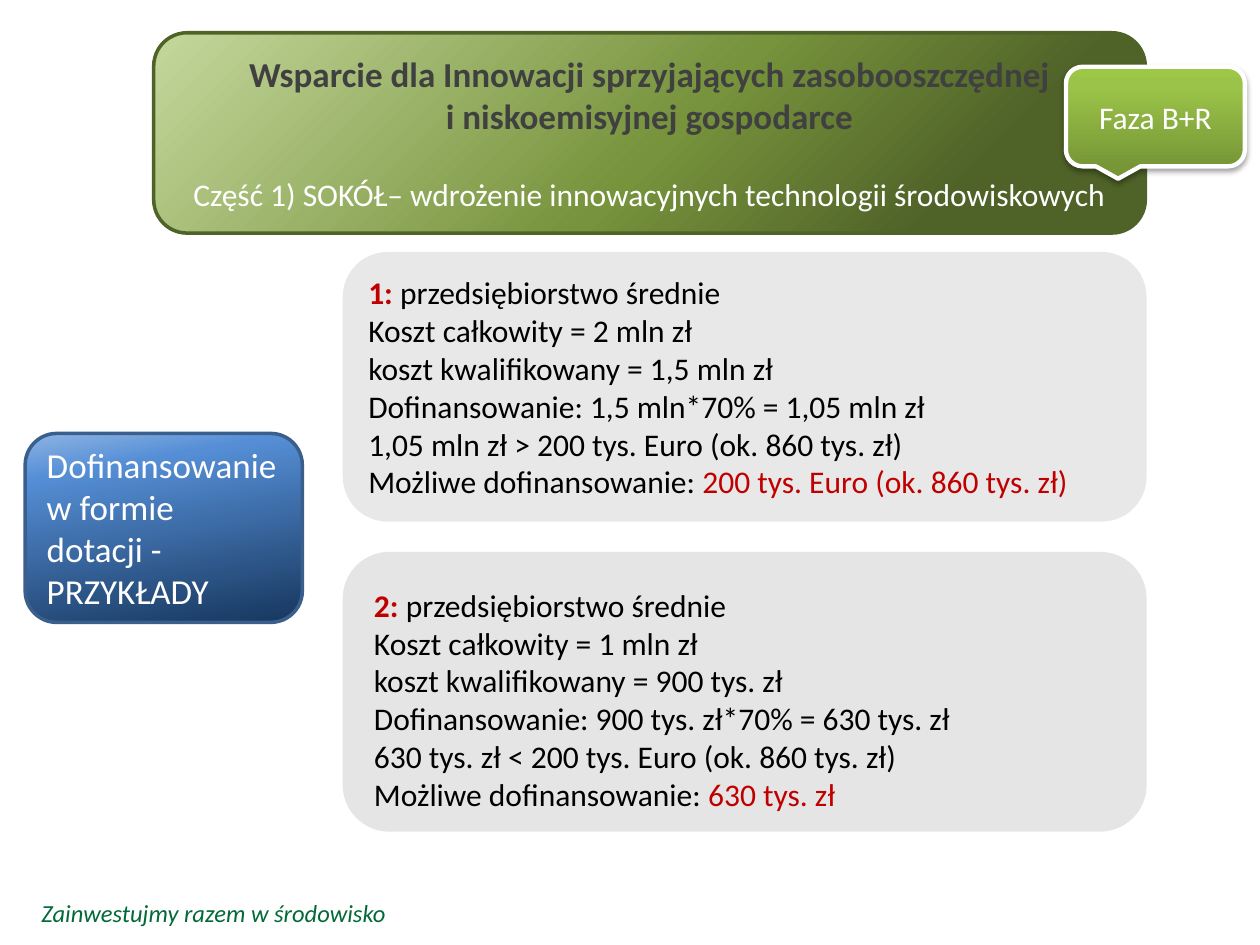
from lxml.etree import SubElement
from pptx import Presentation
from pptx.dml.color import RGBColor
from pptx.enum.shapes import MSO_SHAPE
from pptx.enum.text import MSO_ANCHOR, PP_ALIGN
from pptx.oxml import parse_xml
from pptx.oxml.ns import nsdecls, qn
from pptx.util import Inches, Pt

THEME = {
    "font": "Calibri",
    "title": {"size": 20, "color": "404040", "bold": True},
    "light": {"size": 18, "color": "FFFFFF"},
    "label": {"size": 20, "color": "FFFFFF"},
    "body": {"size": 18, "color": "000000"},
    "number": {"size": 18, "color": "C00000", "bold": True},
    "result": {"size": 18, "color": "C00000"},
    "footer": {"size": 14, "color": "026937", "italic": True},
    "panel": "D9D9D9",
    # Gradient stops run from start to end, angles are clockwise.
    "blue": ([(0, "17375E"), (80, "558ED5"), (100, "8EB4E3")], 260),
    "olive": ([(19, "4F6228"), (48, "77933C"), (99, "C3D69B")], 225),
    "lime": ([(0, "779737"), (80, "9BC348"), (100, "9DC746")], 270),
    "blue_line": ("3A5F8C", 2),
    "olive_line": ("4F6228", 2),
    "white_line": ("FFFFFF", 2.5),
}

FOOTER = [[("Zainwestujmy razem w środowisko", "footer")]]
LABEL = [[("Dofinansowanie w formie ", "label"), ("\n", "label"),
          ("dotacji - PRZYKŁADY", "label")]]
HEADER = [
    [("Wsparcie dla Innowacji sprzyjających zasobooszczędnej", "title"), ("\n", "title"),
     ("i niskoemisyjnej gospodarce", "title")],
    [("Część 1) SOKÓŁ– wdrożenie innowacyjnych technologii środowiskowych", "light")],
]
PHASE = [[("Faza B+R", "light")]]
EXAMPLES = [
    ("1: ", ["Koszt całkowity = 2 mln zł",
             "koszt kwalifikowany = 1,5 mln zł",
             "Dofinansowanie: 1,5 mln*70% = 1,05 mln zł",
             "1,05 mln zł > 200 tys. Euro (ok. 860 tys. zł)"],
     "200 tys. Euro (ok. 860 tys. zł)"),
    ("2: ", ["Koszt całkowity = 1 mln zł",
             "koszt kwalifikowany = 900 tys. zł",
             "Dofinansowanie: 900 tys. zł*70% = 630 tys. zł",
             "630 tys. zł < 200 tys. Euro (ok. 860 tys. zł)"],
     "630 tys. zł"),
]


def example_text(number, steps, result):
    return [
        [(number, "number"), ("przedsiębiorstwo średnie", "body")],
        *[[(step, "body")] for step in steps],
        [("Możliwe dofinansowanie: ", "body"), (result, "result")],
    ]


def write(box, paragraphs, align=PP_ALIGN.LEFT, anchor=MSO_ANCHOR.MIDDLE, gap=0):
    """Fill a shape with paragraphs of (text, style) spans; gap is in points."""
    frame = box.text_frame
    frame.word_wrap = True
    frame.vertical_anchor = anchor
    for index, spans in enumerate(paragraphs):
        para = frame.add_paragraph() if index else frame.paragraphs[0]
        para.alignment = align
        if index and gap:
            para.space_before = Pt(gap)
        for text, style in spans:
            if text == "\n":
                para.add_line_break()
                continue
            span = para.add_run()
            span.text = text
            look = THEME[style]
            values = {"name": THEME["font"], "size": Pt(look["size"]),
                      "bold": look.get("bold", False), "italic": look.get("italic", False)}
            for name, value in values.items():
                setattr(span.font, name, value)
            span.font.color.rgb = RGBColor.from_string(look["color"])


def add_box(page, place, line=None, kind=MSO_SHAPE.ROUNDED_RECTANGLE):
    box = page.shapes.add_shape(kind, *map(Inches, place))
    box.shadow.inherit = False
    if line:
        color, width = THEME[line]
        box.line.color.rgb = RGBColor.from_string(color)
        box.line.width = Pt(width)
    else:
        box.line.fill.background()
    return box


def add_panel(page, place, opacity):
    box = add_box(page, place)
    box.fill.solid()
    box.fill.fore_color.rgb = RGBColor.from_string(THEME["panel"])
    color = box._element.spPr.find(qn("a:solidFill"))[0]
    SubElement(color, qn("a:alpha"), val=str(opacity * 1000))
    return box


def fill_gradient(box, name):
    stops, angle = THEME[name]
    marks = "".join(f'<a:gs pos="{position * 1000}"><a:srgbClr val="{color}"/></a:gs>'
                    for position, color in stops)
    gradient = parse_xml(
        f'<a:gradFill {nsdecls("a")} rotWithShape="1"><a:gsLst>{marks}</a:gsLst>'
        f'<a:lin ang="{angle * 60000}" scaled="0"/></a:gradFill>')
    box._element.spPr.find(qn("a:prstGeom")).addnext(gradient)


def add_shadow(box, opacity, blur, distance, angle):
    effects = box._element.spPr.find(qn("a:effectLst"))
    shadow = SubElement(effects, qn("a:outerShdw"), blurRad=str(Pt(blur)),
                        dist=str(Pt(distance)), dir=str(angle * 60000), rotWithShape="0")
    color = SubElement(shadow, qn("a:srgbClr"), val="000000")
    SubElement(color, qn("a:alpha"), val=str(opacity * 1000))


def add_text(page, place, paragraphs):
    box = page.shapes.add_textbox(*map(Inches, place))
    write(box, paragraphs, anchor=MSO_ANCHOR.TOP)


def main():
    deck = Presentation()
    deck.slide_width, deck.slide_height = Inches(10), Inches(7.5)
    page = deck.slides.add_slide(deck.slide_layouts[6])

    add_text(page, (0.23, 7.08, 4.22, 0.34), FOOTER)

    label = add_box(page, (0.2, 3.44, 2.2, 1.5), "blue_line")
    fill_gradient(label, "blue")
    write(label, LABEL)

    first, second = (example_text(*example) for example in EXAMPLES)
    write(add_panel(page, (2.72, 2, 6.38, 2.14), 59), first)
    add_panel(page, (2.72, 4.38, 6.38, 2.22), 67)
    add_text(page, (2.87, 4.6, 5, 1.92), second)

    header = add_box(page, (1.22, 0.26, 7.87, 1.59), "olive_line")
    fill_gradient(header, "olive")
    write(header, HEADER, align=PP_ALIGN.CENTER, gap=22)

    phase = add_box(page, (8.46, 0.53, 1.42, 0.79), "white_line",
                    MSO_SHAPE.ROUNDED_RECTANGULAR_CALLOUT)
    fill_gradient(phase, "lime")
    add_shadow(phase, opacity=35, blur=3.1, distance=1.8, angle=90)
    write(phase, PHASE, align=PP_ALIGN.CENTER)

    deck.save("out.pptx")


if __name__ == "__main__":
    main()
